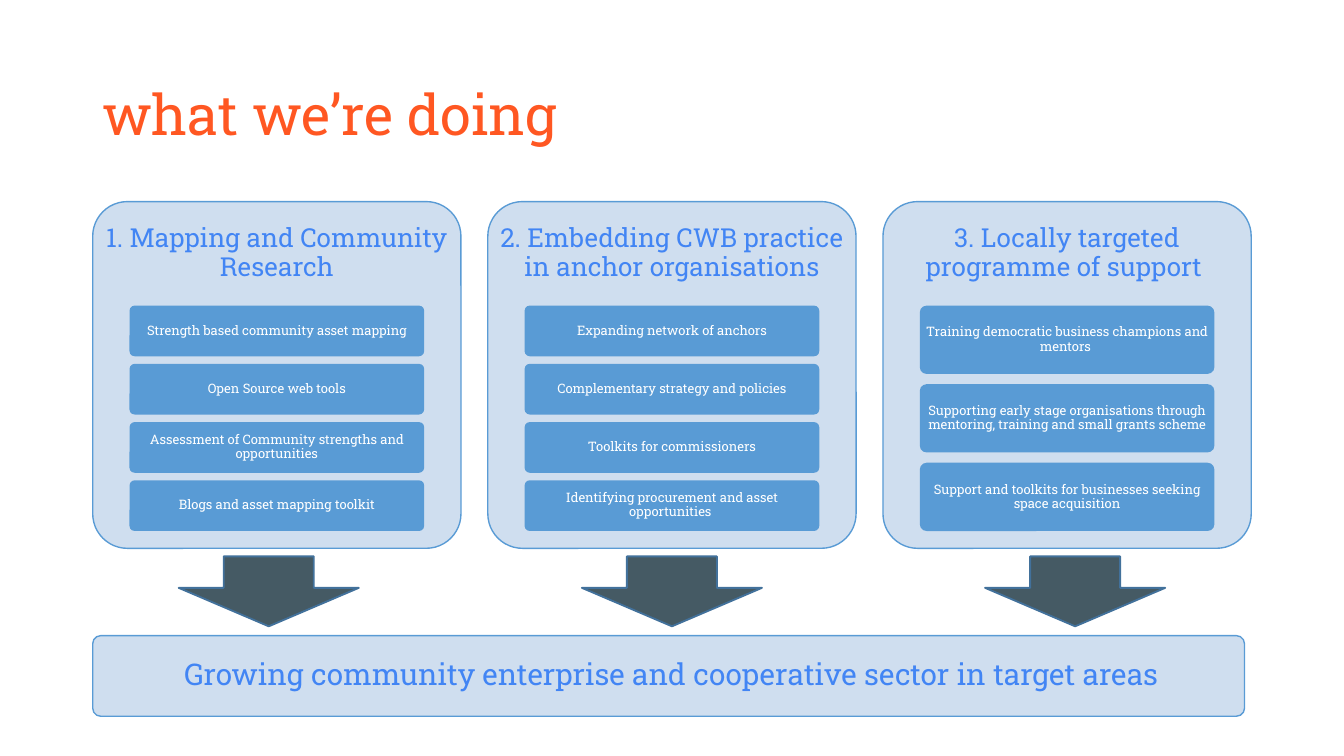
from pptx import Presentation
from pptx.dml.color import RGBColor
from pptx.enum.shapes import MSO_SHAPE
from pptx.enum.text import MSO_ANCHOR, PP_ALIGN
from pptx.util import Inches, Pt

FONT = "Roboto Slab"
COLORS = {
    "title": "FF5722",
    "heading": "4285F4",
    "panel": "CFDEEF",
    "item": "599BD5",
    "item_text": "FFFFFF",
    "arrow": "455A64",
    "arrow_line": "42719B",
}
STRANDS = [
    ("1. Mapping and Community Research", [
        "Strength based community asset mapping",
        "Open Source web tools",
        "Assessment of Community strengths and opportunities",
        "Blogs and asset mapping toolkit",
    ]),
    ("2. Embedding CWB practice in anchor organisations", [
        "Expanding network of anchors",
        "Complementary strategy and policies",
        "Toolkits for commissioners",
        "Identifying procurement and asset opportunities ",
    ]),
    ("3. Locally targeted programme of support ", [
        "Training democratic business champions and mentors ",
        "Supporting early stage organisations through mentoring, "
        "training and small grants scheme",
        "Support and toolkits for businesses seeking space acquisition",
    ]),
]


def rgb(name):
    return RGBColor.from_string(COLORS[name])


def add_filled(s, kind, box, fill, line=None, weight=0.75):
    sp = s.shapes.add_shape(kind, *map(Inches, box))
    sp.shadow.inherit = False
    sp.fill.solid()
    sp.fill.fore_color.rgb = rgb(fill)
    if line:
        sp.line.color.rgb = rgb(line)
        sp.line.width = Pt(weight)
    else:
        sp.line.fill.background()
    return sp


def add_round_rect(s, box, fill, line=None):
    sp = add_filled(s, MSO_SHAPE.ROUNDED_RECTANGLE, box, fill, line)
    sp.adjustments[0] = 0.1
    return sp


def write(sp, text, size, color, insets, align=PP_ALIGN.CENTER, spacing=0.9):
    """Set one vertically centred paragraph; insets are left, top, right, bottom."""
    tf = sp.text_frame
    tf.word_wrap = True
    tf.vertical_anchor = MSO_ANCHOR.MIDDLE
    (tf.margin_left, tf.margin_top,
     tf.margin_right, tf.margin_bottom) = map(Inches, insets)
    p = tf.paragraphs[0]
    p.alignment = align
    p.line_spacing = spacing
    r = p.add_run()
    r.text = text
    r.font.name = FONT
    r.font.size = Pt(size)
    r.font.color.rgb = rgb(color)


def add_title(s, box, text):
    sp = s.shapes.add_textbox(*map(Inches, box))
    write(sp, text, 30, "title", (0.07, 0.04, 0.07, 0.04), PP_ALIGN.LEFT, 1.0)


def add_strand(s, box, heading, items):
    """Draw a panel with its heading in the top 30% and items stacked below."""
    x, y, w, h = box
    add_round_rect(s, box, "panel", "item")
    head_h = 0.3 * h
    head = s.shapes.add_textbox(*map(Inches, (x, y, w, head_h)))
    write(head, heading, 14, "heading", [0.07] * 4)

    gap_ratio = 0.15
    n = len(items)
    item_h = 0.65 * h / (n + gap_ratio * (n - 1))
    for i, text in enumerate(items):
        top = y + head_h + i * item_h * (1 + gap_ratio)
        sp = add_round_rect(s, (x + 0.1 * w, top, 0.8 * w, item_h), "item")
        write(sp, text, 7, "item_text", [0.02] * 4)


def add_arrow(s, box):
    sp = add_filled(s, MSO_SHAPE.DOWN_ARROW, box, "arrow", "arrow_line", 1)
    sp.adjustments[0] = 0.5
    sp.adjustments[1] = 0.55


def add_outcome(s, box, text):
    sp = add_round_rect(s, box, "panel", "item")
    write(sp, text, 16, "heading", (0.18, 0.08, 0.08, 0.08))


def main():
    prs = Presentation()
    prs.slide_width = Inches(10)
    prs.slide_height = prs.slide_width * 9 // 16
    s = prs.slides.add_slide(prs.slide_layouts[6])

    left = 0.69
    add_title(s, (left, 0.3, 8.62, 1.09), "what we’re doing")
    for i, (heading, items) in enumerate(STRANDS):
        add_strand(s, (left + i * 2.94, 1.5, 2.74, 2.58), heading, items)
    add_outcome(s, (left, 4.73, 8.57, 0.6),
                "Growing community enterprise and cooperative sector in target areas ")
    for i in range(len(STRANDS)):
        add_arrow(s, (1.33 + i * 3, 4.14, 1.34, 0.52))

    prs.save("out.pptx")


if __name__ == "__main__":
    main()
